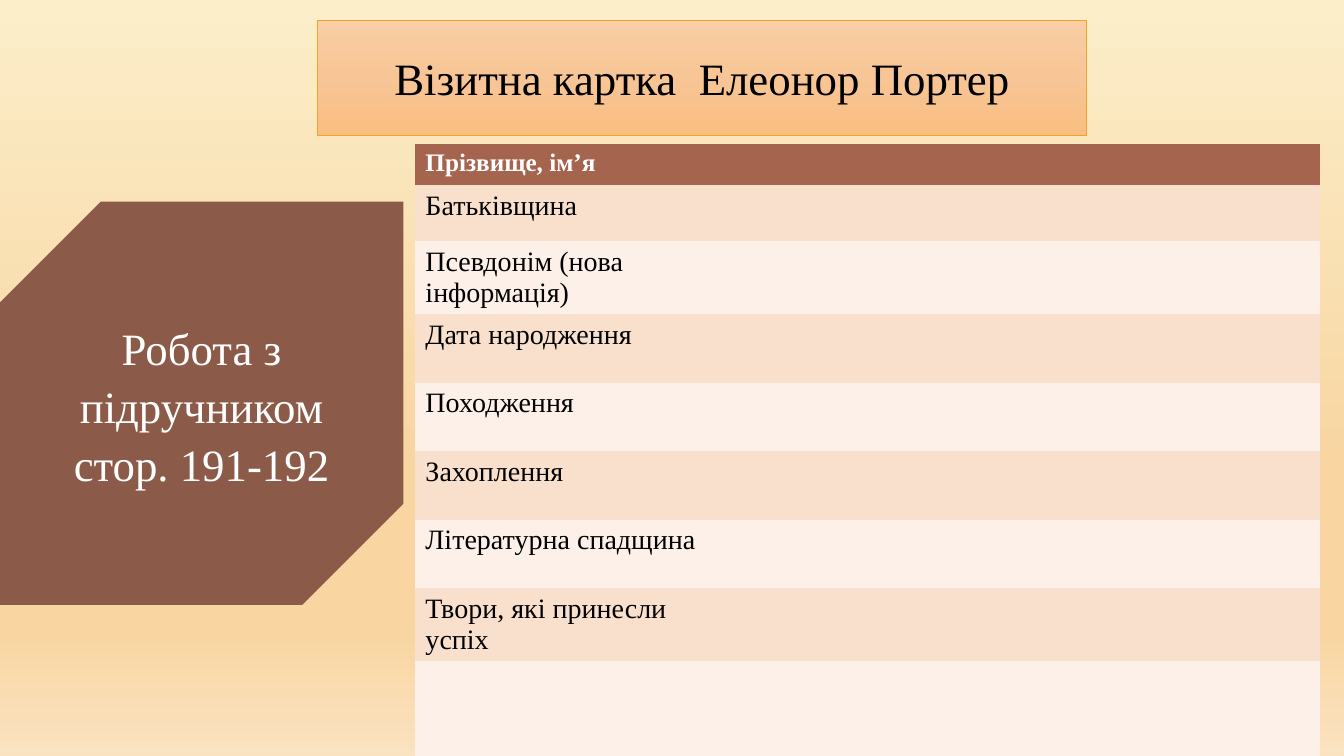
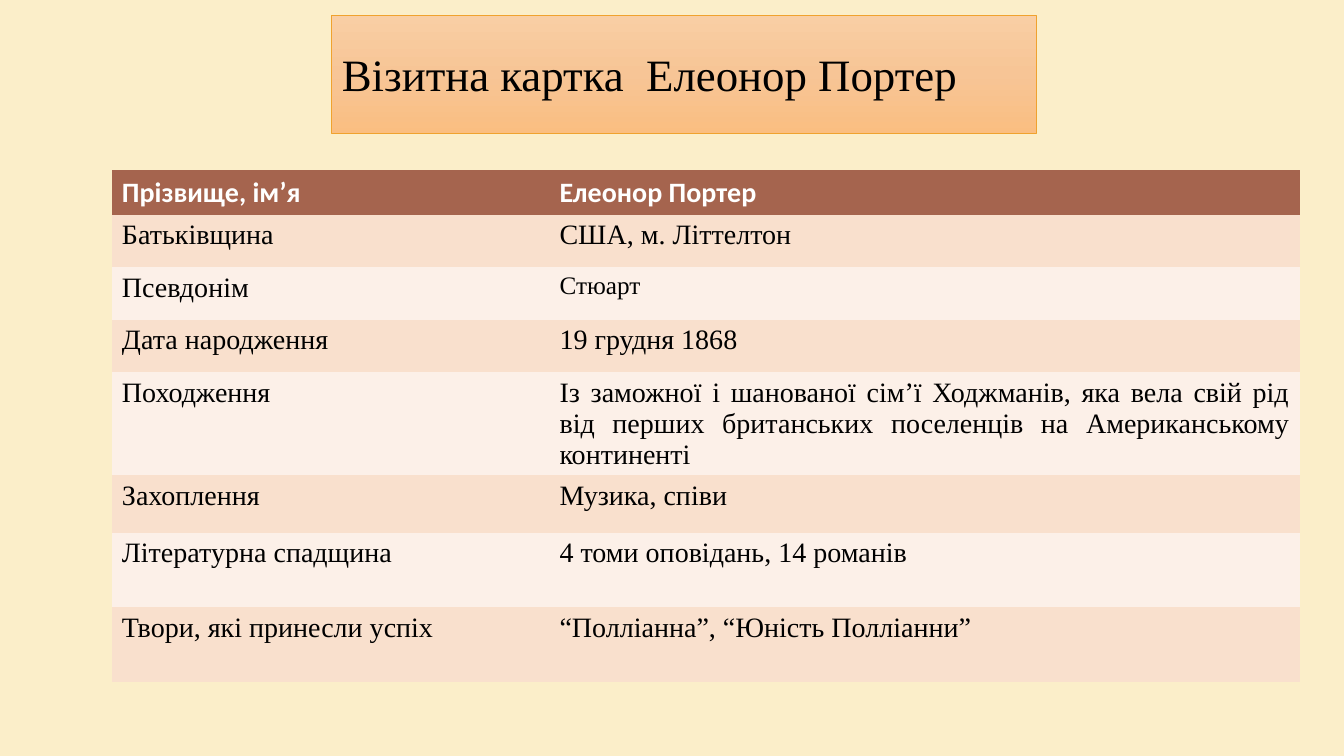
import math

import lxml.etree
import pptx
import pptx.dml.color
import pptx.enum.text
import pptx.oxml.ns
import pptx.util

Inches = pptx.util.Inches
Pt = pptx.util.Pt
RGBColor = pptx.dml.color.RGBColor
PP_ALIGN = pptx.enum.text.PP_ALIGN
MSO_ANCHOR = pptx.enum.text.MSO_ANCHOR
qn = pptx.oxml.ns.qn

# Shared colours and fonts
BLACK = RGBColor(0x00, 0x00, 0x00)
WHITE = RGBColor(0xFF, 0xFF, 0xFF)
CREAM = RGBColor(0xFB, 0xEE, 0xC9)
SAND = RGBColor(0xF8, 0xD5, 0xA1)
PALE_SAND = RGBColor(0xFA, 0xE3, 0xC0)
ORANGE = RGBColor(0xF0, 0xA2, 0x2E)
HEADER = RGBColor(0xA5, 0x64, 0x4E)
BAND_DARK = RGBColor(0xF9, 0xE0, 0xCD)
BAND_LIGHT = RGBColor(0xFC, 0xF0, 0xE8)
LEAF = RGBColor(0x8B, 0x5A, 0x48)
TITLE_STOPS = [(0, RGBColor(0xF9, 0xCE, 0xA4)),
               (50, RGBColor(0xF7, 0xC5, 0x96)),
               (100, RGBColor(0xFA, 0xBE, 0x81))]
PAGE_STOPS = [(0, CREAM), (63, SAND), (83, SAND), (100, PALE_SAND)]
SERIF = "Times New Roman"
SANS = "Calibri"
NO_GRID_STYLE = "{2D5ABB26-0587-4C30-8999-92F81FD0307C}"

TITLE = "Візитна картка  Елеонор Портер"


class Deck:
    """Holds the shared style and the current slide."""

    def __init__(self):
        self.prs = pptx.Presentation()
        self.prs.slide_width = Inches(13.33)
        self.prs.slide_height = Inches(7.5)
        self.slide = None

    def add_slide(self, stops=None):
        layout = self.prs.slide_layouts.get_by_name("Title Only")
        self.slide = self.prs.slides.add_slide(layout)
        fill = self.slide.background.fill
        if stops:
            self.gradient(fill, stops)
        else:
            fill.solid()
            fill.fore_color.rgb = CREAM

    def gradient(self, fill, stops):
        """Top-to-bottom gradient with any number of stops."""
        fill.gradient()
        fill.gradient_angle = 270
        gs_lst = fill.gradient_stops[0]._gs.getparent()
        for gs in list(gs_lst):
            gs_lst.remove(gs)
        for percent, color in stops:
            gs = lxml.etree.SubElement(gs_lst, qn("a:gs"), pos=str(percent * 1000))
            lxml.etree.SubElement(gs, qn("a:srgbClr"), val=str(color))

    def style(self, p, size, color, font=SERIF, bold=False, align=PP_ALIGN.LEFT):
        p.font.name = font
        p.font.size = Pt(size)
        p.font.bold = bold
        p.font.color.rgb = color
        p.alignment = align

    def title(self, left, top, width, height, align):
        sp = self.slide.shapes.title
        sp.left, sp.top = Inches(left), Inches(top)
        sp.width, sp.height = Inches(width), Inches(height)
        geom = lxml.etree.SubElement(sp._element.spPr, qn("a:prstGeom"), prst="roundRect")
        lxml.etree.SubElement(geom, qn("a:avLst"))
        self.gradient(sp.fill, TITLE_STOPS)
        sp.line.color.rgb = ORANGE
        sp.line.width = Pt(0.5)
        tf = sp.text_frame
        tf.text = TITLE
        tf.vertical_anchor = MSO_ANCHOR.MIDDLE
        self.style(tf.paragraphs[0], 32, BLACK, align=align)

    def table(self, left, top, widths, heights, rows, head_font, head_size):
        """Banded table; a row may give fewer texts than there are columns."""
        frame = self.slide.shapes.add_table(
            len(heights), len(widths), Inches(left), Inches(top),
            Inches(sum(widths)), Inches(sum(heights)))
        table = frame.table
        table._tbl.tblPr.find(qn("a:tableStyleId")).text = NO_GRID_STYLE
        table.first_row = table.horz_banding = False
        for column, width in zip(table.columns, widths):
            column.width = Inches(width)
        for i, height in enumerate(heights):
            table.rows[i].height = Inches(height)
            for cell in table.rows[i].cells:
                cell.fill.solid()
                cell.fill.fore_color.rgb = (
                    HEADER if i == 0 else BAND_DARK if i % 2 else BAND_LIGHT)
        for i, texts in enumerate(rows):
            for j, text in enumerate(texts):
                cell = table.cell(i, j)
                cell.text = text
                p = cell.text_frame.paragraphs[0]
                if i == 0:
                    self.style(p, head_size, WHITE, head_font, bold=True)
                else:
                    self.style(p, 20, BLACK)
        return table

    def leaf(self, left, top, width, height, slant, radius, lines):
        """Slanted panel with two opposite rounded corners."""
        angles = [math.radians(a) for a in range(0, 91, 5)]
        corner = [(radius * (1 - math.cos(a)), radius * (1 - math.sin(a)))
                  for a in angles]
        outline = corner + [(width, 0)]
        outline += [(width - u, height - v) for u, v in outline]
        points = [(left + u, top + v + slant * (width - u)) for u, v in outline]
        builder = self.slide.shapes.build_freeform(*points[0], scale=Inches(1))
        builder.add_line_segments(points[1:], close=True)
        sp = builder.convert_to_shape()
        sp.shadow.inherit = False
        sp.fill.solid()
        sp.fill.fore_color.rgb = LEAF
        sp.line.fill.background()
        tf = sp.text_frame
        tf.word_wrap = True
        tf.vertical_anchor = MSO_ANCHOR.MIDDLE
        tf.text = "\n".join(lines)
        for p in tf.paragraphs:
            self.style(p, 32, WHITE, align=PP_ALIGN.CENTER)
            p.line_spacing = 1.08


def main():
    deck = Deck()

    # Slide 1: card to fill in
    deck.add_slide(PAGE_STOPS)
    deck.title(3.15, 0.2, 7.63, 1.14, PP_ALIGN.CENTER)
    labels = ["Прізвище, ім’я", "Батьківщина", "Псевдонім (нова інформація)",
              "Дата народження", "Походження", "Захоплення",
              "Літературна спадщина", "Твори, які принесли успіх"]
    deck.table(4.12, 1.43, [2.92, 6.05],
               [0.4, 0.56, 0.72] + [0.68] * 4 + [0.72, 0.95],
               [[label] for label in labels], SERIF, 18)
    deck.leaf(0.12, 1.96, 3.59, 3.69, 0.15, 0.65,
              ["Робота з підручником", "стор. 191-192"])

    # Slide 2: completed card
    deck.add_slide()
    labels[2] = "Псевдонім"
    answers = ["Елеонор Портер", "США, м. Літтелтон", "Стюарт", "19 грудня 1868",
               "Із заможної і шанованої сім’ї Ходжманів, яка вела свій рід від "
               "перших британських поселенців на Американському континенті",
               "Музика, співи", "4 томи оповідань, 14 романів",
               "“Полліанна”, “Юність Полліанни”"]
    table = deck.table(1.11, 1.69, [4.34, 7.44],
                       [0.44, 0.52, 0.52, 0.52, 1.02, 0.57, 0.74, 0.74],
                       list(zip(labels, answers)), SANS, 20)
    table.cell(2, 1).text_frame.paragraphs[0].font.size = Pt(18)
    table.cell(4, 1).text_frame.paragraphs[0].alignment = PP_ALIGN.JUSTIFY
    deck.title(3.29, 0.15, 6.99, 1.17, PP_ALIGN.LEFT)

    deck.prs.save("out.pptx")


if __name__ == "__main__":
    main()
